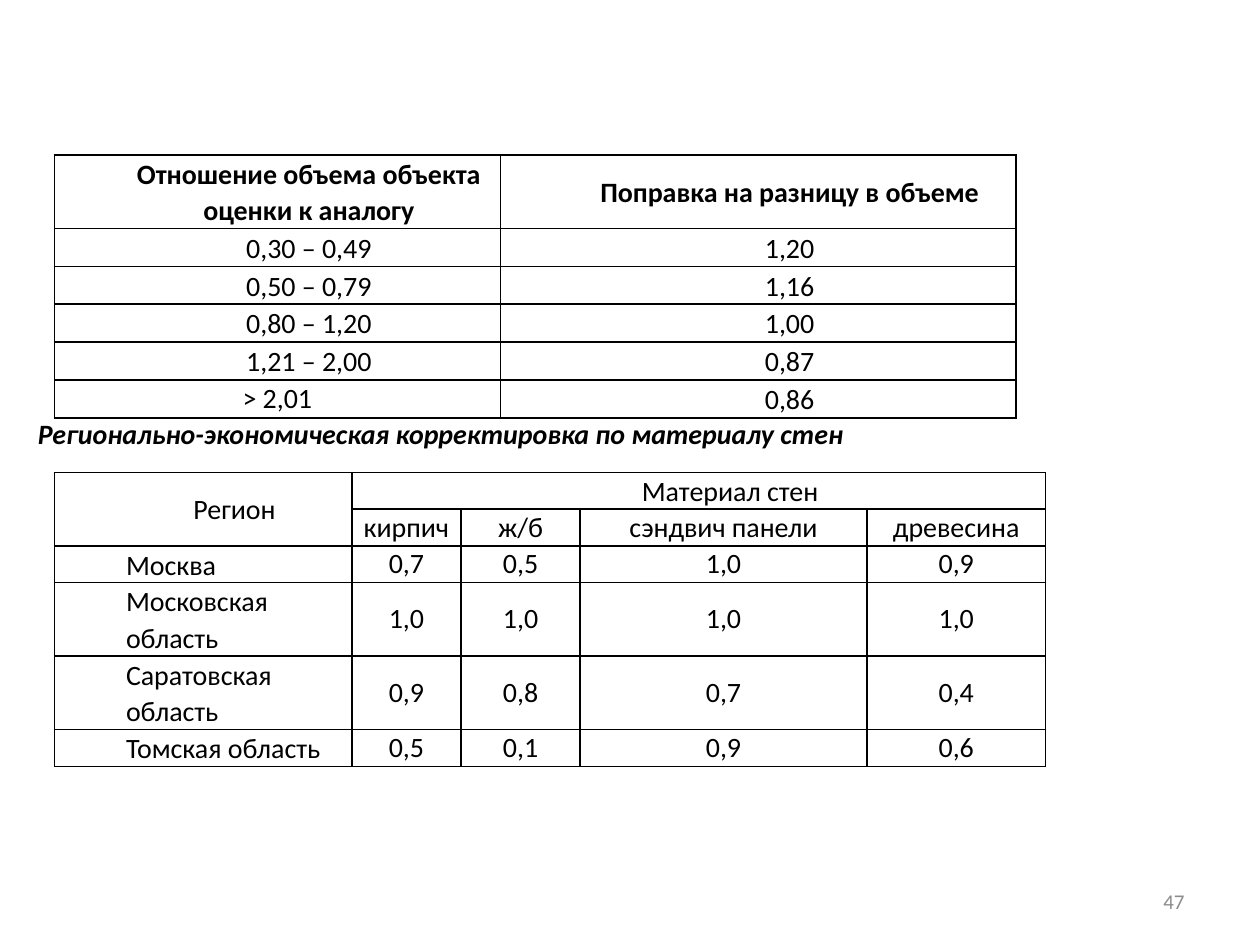
import pptx
import pptx.dml.color
import pptx.enum.text
import pptx.oxml
import pptx.oxml.ns
import pptx.util

Pt = pptx.util.Pt
ALIGN = pptx.enum.text.PP_ALIGN
MIDDLE = pptx.enum.text.MSO_ANCHOR.MIDDLE
BLACK, WHITE, GREY = "000000", "FFFFFF", "8C8C8C"
TABLE_LEFT = 31
INDENT = 36

VOLUME_ROWS = [
    ["Отношение объема объекта оценки к аналогу", "Поправка на разницу в объеме"],
    ["0,30 – 0,49", "1,20"],
    ["0,50 – 0,79", "1,16"],
    ["0,80 – 1,20", "1,00"],
    ["1,21 – 2,00", "0,87"],
    ["> 2,01", "0,86"],
]
WALL_ROWS = [
    ["Регион", "Материал стен", "", "", ""],
    ["", "кирпич", "ж/б", "сэндвич панели", "древесина"],
    ["Москва", "0,7", "0,5", "1,0", "0,9"],
    ["Московская область", "1,0", "1,0", "1,0", "1,0"],
    ["Саратовская область", "0,9", "0,8", "0,7", "0,4"],
    ["Томская область", "0,5", "0,1", "0,9", "0,6"],
]


def color(value):
    return pptx.dml.color.RGBColor.from_string(value)


def style_runs(para, size=16, fill=BLACK, bold=False, italic=False):
    for span in para.runs:
        span.font.name = "Calibri"
        span.font.size = Pt(size)
        span.font.bold = bold
        span.font.italic = italic
        span.font.color.rgb = color(fill)


def set_borders(cell):
    properties = cell._tc.get_or_add_tcPr()
    for index, side in enumerate(("lnL", "lnR", "lnT", "lnB")):
        line = pptx.oxml.parse_xml(
            f'<a:{side} {pptx.oxml.ns.nsdecls("a")} w="{Pt(1)}"><a:solidFill>'
            f'<a:srgbClr val="{BLACK}"/></a:solidFill></a:{side}>')
        properties.insert(index, line)


def indent_paragraph(para):
    para.line_spacing = 1.07
    para._p.get_or_add_pPr().set("marL", str(Pt(INDENT)))
    para._p.get_or_add_pPr().set("indent", "0")


def fill_cell(cell, text, align, indented, bold):
    cell.margin_left = cell.margin_right = Pt(5)
    cell.margin_top = cell.margin_bottom = Pt(0)
    cell.vertical_anchor = MIDDLE
    set_borders(cell)
    cell.fill.solid()
    cell.fill.fore_color.rgb = color(WHITE)
    para = cell.text_frame.paragraphs[0]
    para.text = text
    para.alignment = align
    if indented:
        indent_paragraph(para)
    style_runs(para, bold=bold)


def add_grid(page, top, widths, heights):
    frame = page.shapes.add_table(len(heights), len(widths), Pt(TABLE_LEFT), Pt(top),
                                  Pt(sum(widths)), Pt(sum(heights)))
    table = frame.table
    table.first_row = table.horz_banding = False
    for column, width in zip(table.columns, widths):
        column.width = Pt(width)
    for row, height in zip(table.rows, heights):
        row.height = Pt(height)
    return table


def add_volume_table(page):
    table = add_grid(page, 88.5, [255, 294.5], [42] + [21.7] * 5)
    for r, texts in enumerate(VOLUME_ROWS):
        for c, text in enumerate(texts):
            indented = not text.startswith(">")
            fill_cell(table.cell(r, c), text, ALIGN.CENTER, indented, bold=r == 0)


def add_wall_table(page):
    table = add_grid(page, 270, [170, 62.5, 68, 164, 102], [21, 21, 21, 42, 42, 21])
    table.cell(0, 0).merge(table.cell(1, 0))
    table.cell(0, 1).merge(table.cell(0, 4))
    for r, texts in enumerate(WALL_ROWS):
        for c, text in enumerate(texts):
            align = ALIGN.LEFT if c == 0 and r > 1 else ALIGN.CENTER
            fill_cell(table.cell(r, c), text, align, c == 0 or r == 0, bold=False)


def add_caption(page, text):
    box = page.placeholders[1]
    box.left, box.top, box.width, box.height = Pt(14.4), Pt(234.5), Pt(692), Pt(28)
    para = box.text_frame.paragraphs[0]
    para.text = text
    para.space_before = Pt(0)
    properties = para._p.get_or_add_pPr()
    properties.set("marL", "0")
    properties.set("indent", "0")
    properties.append(pptx.oxml.parse_xml(f'<a:buNone {pptx.oxml.ns.nsdecls("a")}/>'))
    style_runs(para, bold=True, italic=True)


def add_page_number(page, text):
    box = page.shapes.add_textbox(Pt(516), Pt(500.5), Pt(168), Pt(28.75))
    box.text_frame.word_wrap = True
    box.text_frame.vertical_anchor = MIDDLE
    para = box.text_frame.paragraphs[0]
    para.text = text
    para.alignment = ALIGN.RIGHT
    style_runs(para, size=12, fill=GREY)


def main():
    deck = pptx.Presentation()
    deck.slide_width, deck.slide_height = Pt(720), Pt(540)
    page = deck.slides.add_slide(deck.slide_layouts[1])
    # The slide has no title
    title = page.shapes.title.element
    title.getparent().remove(title)
    # Caption between the tables
    add_caption(page, "Регионально-экономическая корректировка по материалу стен")
    add_page_number(page, "47")
    # Correction tables
    add_volume_table(page)
    add_wall_table(page)
    deck.save("out.pptx")


if __name__ == "__main__":
    main()
